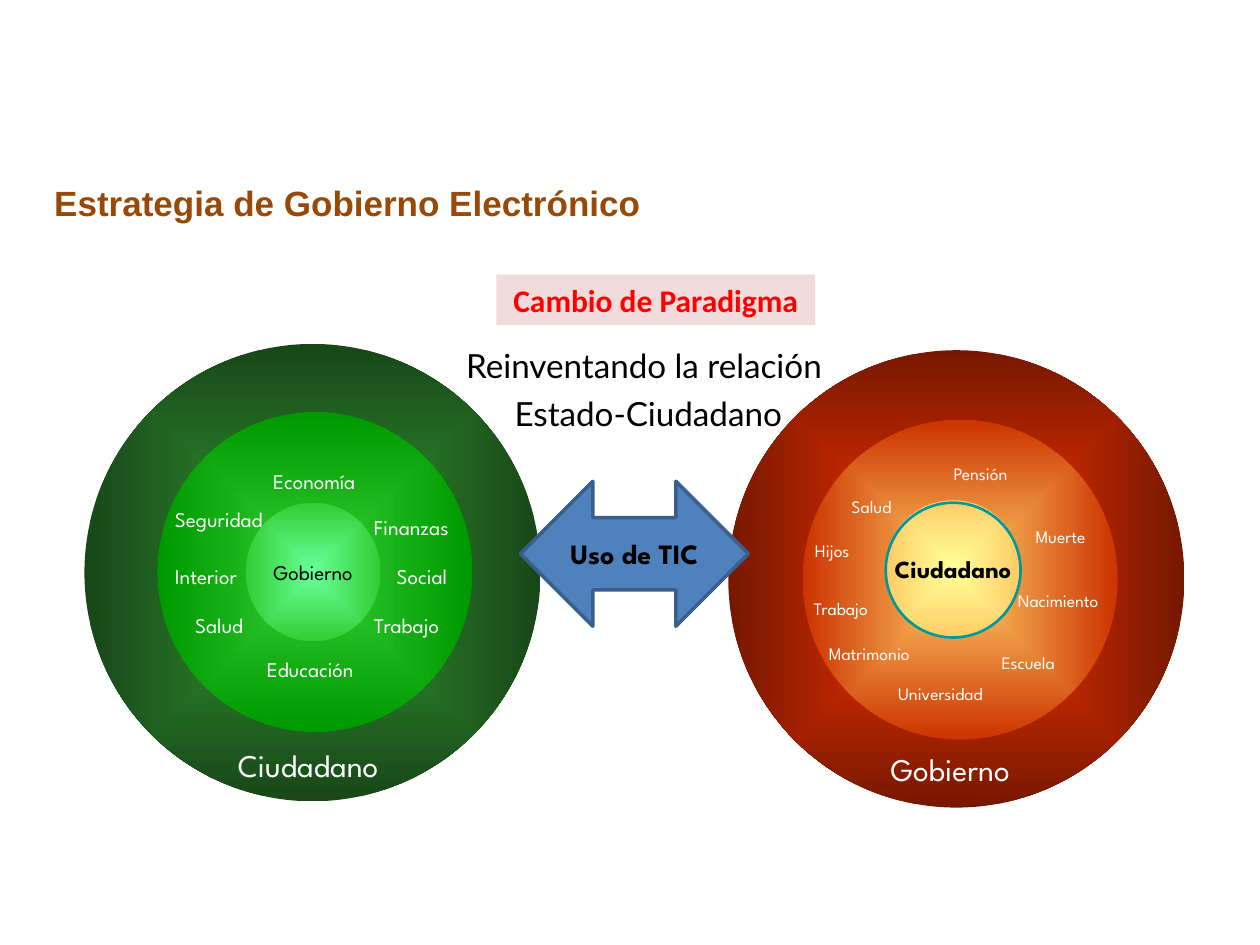
from typing import NamedTuple, Optional

from lxml import etree
from pptx import Presentation
from pptx import util as u
from pptx.dml.color import RGBColor
from pptx.enum import shapes, text
from pptx.oxml.ns import qn

PX = 9144
COLORS = {
    "black": "000000", "white": "FFFFFF", "title": "984807", "red": "FF0000",
    "pink": "F2DCDB", "blue": "4F81BD", "navy": "3A5F8C", "teal": "009999",
    "forest": "339933", "forest_dark": "184718", "green": "33CC33",
    "green_dark": "009900", "mint": "66FF99", "scarlet": "FF3300",
    "maroon": "761800", "amber": "FFCC66", "rust": "CC3300", "lemon": "FFFF99",
}
SPARTAN = "League Spartan"
ALIGN = text.PP_ALIGN
ANCHOR = text.MSO_ANCHOR
GEOMETRY = shapes.MSO_SHAPE


class Box(NamedTuple):
    x: int
    y: int
    w: int
    h: int


class Ring(NamedTuple):
    box: Box
    inner: str
    outer: str
    core: Optional[str] = None
    core_size: int = 12
    core_bold: bool = False


class Label(NamedTuple):
    words: str
    x: int
    y: int
    w: int


class World(NamedTuple):
    rings: list[Ring]
    labels: list[Label]
    label_size: int
    label_height: int
    caption: str
    caption_box: Box


WORLDS = [
    World(
        [Ring(Box(67, 273, 362, 363), "forest", "forest_dark"),
         Ring(Box(125, 327, 250, 254), "green", "green_dark"),
         Ring(Box(195, 399, 107, 110), "mint", "green", "Gobierno")],
        [Label("Interior", 129, 437, 72), Label("Finanzas", 287, 398, 87),
         Label("Social", 305, 437, 65), Label("Seguridad", 129, 392, 95),
         Label("Trabajo", 287, 476, 76), Label("Economía", 207, 362, 95),
         Label("Educación", 202, 511, 97), Label("Salud", 145, 476, 62)],
        12, 40, "Ciudadano", Box(179, 587, 141, 40)),
    World(
        [Ring(Box(578, 278, 362, 363), "scarlet", "maroon"),
         Ring(Box(637, 333, 250, 254), "amber", "rust"),
         Ring(Box(703, 397, 107, 109), "lemon", "amber", "Ciudadano", 14, True)],
        [Label("Escuela", 785, 509, 72), Label("Universidad", 703, 534, 99),
         Label("Nacimiento", 798, 460, 94), Label("Matrimonio", 648, 502, 95),
         Label("Salud", 666, 385, 57), Label("Hijos", 637, 420, 54),
         Label("Pensión", 747, 359, 74), Label("Muerte", 812, 409, 65),
         Label("Trabajo", 636, 466, 70)],
        10, 37, "Gobierno", Box(697, 590, 123, 40)),
]


def rgb(name: str) -> RGBColor:
    return RGBColor.from_string(COLORS[name])


def emu(box: Box) -> list[int]:
    return [length * PX for length in box]


def write(holder, words: str, *, size: int, color: str, font: str = SPARTAN,
          bold: bool = False, align=ALIGN.LEFT, anchor=ANCHOR.TOP,
          insets: tuple = (10, 5, 10, 5), wrap: bool = True,
          grow: bool = False, gap: int = 0) -> None:
    frame = holder.text_frame
    frame.text = words
    frame.word_wrap = wrap
    frame.vertical_anchor = anchor
    frame.auto_size = (text.MSO_AUTO_SIZE.SHAPE_TO_FIT_TEXT if grow
                       else text.MSO_AUTO_SIZE.NONE)
    (frame.margin_left, frame.margin_top,
     frame.margin_right, frame.margin_bottom) = [i * PX for i in insets]
    for number, paragraph in enumerate(frame.paragraphs):
        paragraph.alignment = align
        if number and gap:
            paragraph.space_before = u.Pt(gap)
        for run in paragraph.runs:
            run.font.name = font
            run.font.size = u.Pt(size)
            run.font.bold = bold
            run.font.color.rgb = rgb(color)


def draw_text(slide, box: Box, words: str, **style) -> None:
    write(slide.shapes.add_textbox(*emu(box)), words, **style)


def draw_shape(slide, kind, box: Box, fill: Optional[str] = None,
               line: Optional[str] = None, width: float = 1):
    shape = slide.shapes.add_shape(kind, *emu(box))
    shape.shadow.inherit = False
    if fill:
        shape.fill.solid()
        shape.fill.fore_color.rgb = rgb(fill)
    else:
        shape.fill.background()
    if line:
        shape.line.color.rgb = rgb(line)
        shape.line.width = u.Pt(width)
    else:
        shape.line.fill.background()
    return shape


def draw_ring(slide, ring: Ring) -> None:
    circle = draw_shape(slide, GEOMETRY.OVAL, ring.box)
    circle.fill.gradient()
    for stop, name in zip(circle.fill.gradient_stops, (ring.inner, ring.outer)):
        stop.color.rgb = rgb(name)
    gradient = circle._element.spPr.find(qn("a:gradFill"))
    gradient.remove(gradient.find(qn("a:lin")))
    from_centre = etree.SubElement(gradient, qn("a:path"), {"path": "shape"})
    etree.SubElement(from_centre, qn("a:fillToRect"),
                     {side: "50000" for side in "ltrb"})
    if ring.core:
        write(circle, ring.core, size=ring.core_size, color="black",
              bold=ring.core_bold, align=ALIGN.CENTER, anchor=ANCHOR.MIDDLE,
              insets=(10,) * 4, wrap=False)


def draw_world(slide, world: World) -> None:
    for ring in world.rings:
        draw_ring(slide, ring)
    for label in world.labels:
        draw_text(slide, Box(label.x, label.y, label.w, world.label_height),
                  label.words, size=world.label_size, color="white",
                  insets=(10,) * 4, wrap=False, grow=True)
    draw_text(slide, world.caption_box, world.caption, size=18, color="white",
              wrap=False, grow=True)


def main() -> None:
    deck = Presentation()
    deck.slide_width, deck.slide_height = 1000 * PX, 750 * PX
    slide = deck.slides.add_slide(deck.slide_layouts[6])

    draw_text(slide, Box(287, 269, 455, 50),
              "Reinventando la relación \nEstado-Ciudadano", size=19,
              color="black", font="Lato", align=ALIGN.CENTER, gap=5)
    for world in WORLDS:
        draw_world(slide, world)
    draw_shape(slide, GEOMETRY.OVAL, Box(703, 399, 107, 107),
               line="teal", width=1.5)

    paradigm = draw_shape(slide, GEOMETRY.RECTANGLE, Box(394, 218, 253, 40), "pink")
    write(paradigm, "Cambio de Paradigma", size=18, color="red", font="Calibri",
          bold=True, align=ALIGN.CENTER, grow=True)
    draw_text(slide, Box(4, 131, 961, 50), "Estrategia de Gobierno Electrónico",
              size=20, color="title", font="Arial", bold=True,
              insets=(39, 13, 10, 5))
    exchange = draw_shape(slide, GEOMETRY.LEFT_RIGHT_ARROW,
                          Box(413, 382, 181, 115), "blue", "navy", 2)
    write(exchange, "Uso de TIC", size=16, color="black", bold=True,
          align=ALIGN.CENTER, anchor=ANCHOR.MIDDLE)
    deck.save("out.pptx")


if __name__ == "__main__":
    main()
